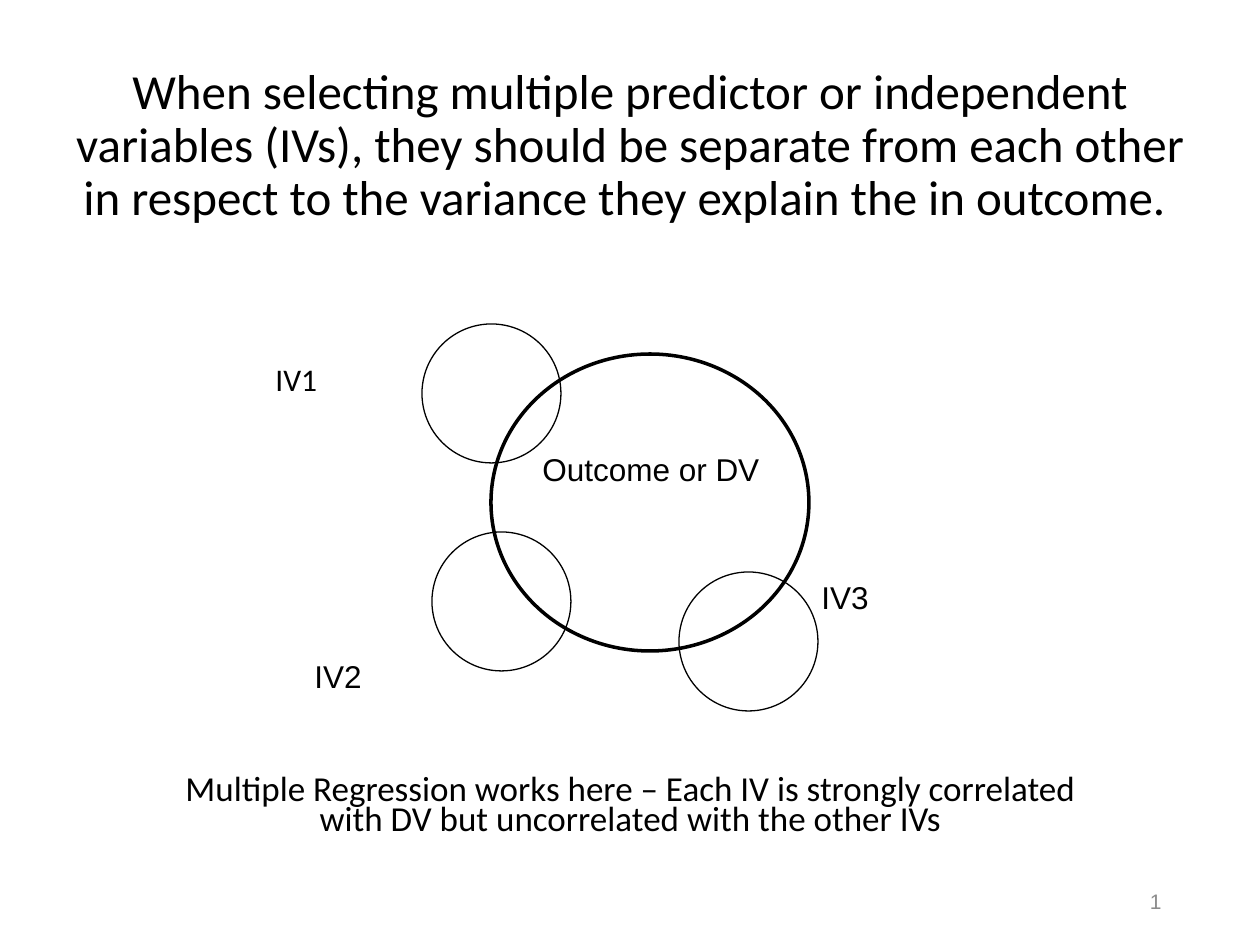
"""Build a slide showing three separate predictors that each overlap one outcome."""
from pptx import Presentation
from pptx.dml.color import RGBColor
from pptx.enum.shapes import MSO_SHAPE
from pptx.enum.text import MSO_ANCHOR, MSO_AUTO_SIZE, PP_ALIGN
from pptx.util import Emu, Pt

OVAL = MSO_SHAPE.OVAL
TOP, MIDDLE, BOTTOM = MSO_ANCHOR.TOP, MSO_ANCHOR.MIDDLE, MSO_ANCHOR.BOTTOM
LEFT, CENTER, RIGHT = PP_ALIGN.LEFT, PP_ALIGN.CENTER, PP_ALIGN.RIGHT
NO_AUTOFIT = MSO_AUTO_SIZE.NONE

PX = 914400 // 126
SLIDE_SIZE = (1260, 945)
COLORS = {"ink": "000000", "number": "8C8C8C"}

TITLE = {
    "text": "When selecting multiple predictor or independent variables (IVs), "
            "they should be separate from each other in respect to the variance "
            "they explain the in outcome. ",
    "box": (63, 74, 1134, 158), "size": 28, "font": "Calibri",
    "align": CENTER, "anchor": BOTTOM, "spacing": 0.9,
}
CONCLUSION = {
    "text": "Multiple Regression works here – Each IV is strongly correlated "
            "with DV but uncorrelated with the other IVs",
    "box": (158, 772, 945, 83), "size": 20, "font": "Calibri",
    "align": CENTER, "spacing": 0.7,
}
LABELS = [
    {"text": "IV3", "box": (809, 572, 100, 50)},
    {"text": "IV2", "box": (302, 651, 139, 50)},
    {"text": "IV1", "box": (263, 354, 169, 50), "font": "Calibri"},
    {"text": "Outcome or DV", "box": (530, 444, 268, 50)},
    {"text": "1", "box": (890, 876, 284, 50), "size": 12, "color": "number",
     "align": RIGHT, "anchor": MIDDLE},
]

OUTCOME_CIRCLE = (491, 354, 318, 297)
PREDICTOR_DIAMETER = 139
PREDICTOR_CORNERS = [(679, 572), (432, 532), (422, 324)]


def color(name):
    return RGBColor.from_string(COLORS[name])


def scale(box):
    return [Emu(value * PX) for value in box]


def write(shape, content):
    geometry = zip(("left", "top", "width", "height"), scale(content["box"]))
    for name, value in geometry:
        setattr(shape, name, value)
    frame = shape.text_frame
    frame_format = {
        "text": content["text"],
        "word_wrap": True,
        "auto_size": NO_AUTOFIT,
        "vertical_anchor": content.get("anchor", TOP),
    }
    for name, value in frame_format.items():
        setattr(frame, name, value)
    paragraph = frame.paragraphs[0]
    paragraph_format = {
        "alignment": content.get("align", LEFT),
        "line_spacing": content.get("spacing", 1.0),
        "space_before": Pt(0),
    }
    for name, value in paragraph_format.items():
        setattr(paragraph, name, value)
    font = paragraph.runs[0].font
    font.name = content.get("font", "Arial")
    font.size = Pt(content.get("size", 18))
    font.color.rgb = color(content.get("color", "ink"))


def add_circle(slide, box, line_width):
    circle = slide.shapes.add_shape(OVAL, *scale(box))
    circle.shadow.inherit = False
    circle.fill.background()
    circle.line.color.rgb = color("ink")
    circle.line.width = Pt(line_width)


def main():
    presentation = Presentation()
    presentation.slide_width, presentation.slide_height = scale(SLIDE_SIZE)
    slide = presentation.slides.add_slide(presentation.slide_layouts[0])
    write(slide.shapes.title, TITLE)
    write(slide.placeholders[1], CONCLUSION)
    add_circle(slide, OUTCOME_CIRCLE, 2)
    for corner in PREDICTOR_CORNERS:
        add_circle(slide, (*corner, PREDICTOR_DIAMETER, PREDICTOR_DIAMETER), 0.75)
    for label in LABELS:
        write(slide.shapes.add_textbox(*scale(label["box"])), label)
    presentation.save("out.pptx")


if __name__ == "__main__":
    main()
